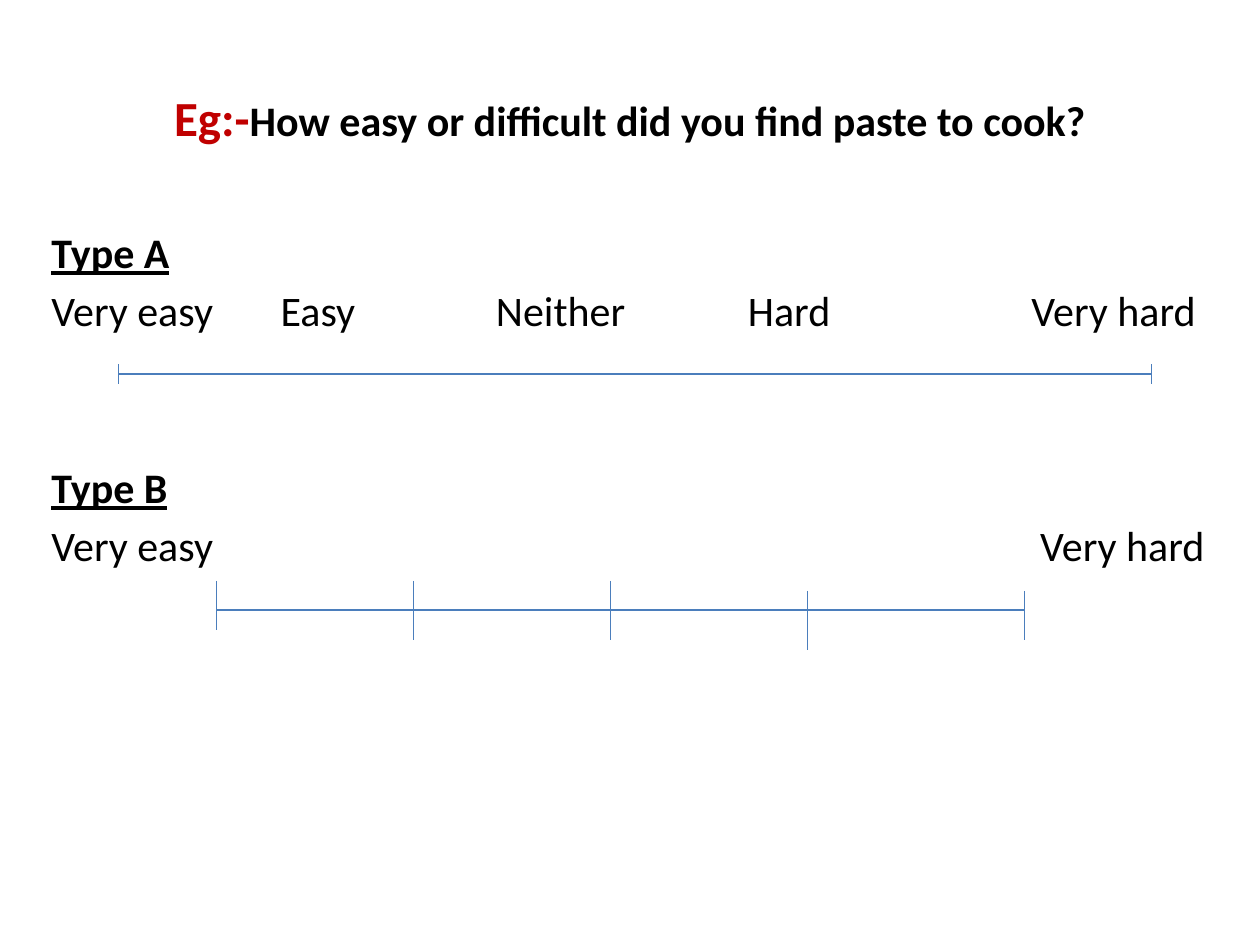
"""Build a slide that shows two kinds of rating scale under one survey question."""
from dataclasses import dataclass

from lxml import etree
from pptx import Presentation
from pptx.dml.color import RGBColor
from pptx.enum import shapes, text
from pptx.oxml import ns
from pptx.util import Pt


@dataclass(frozen=True)
class Theme:
    """Colours, font and sizes of the slide."""
    font: str = "Calibri"
    ink: RGBColor = RGBColor(0x00, 0x00, 0x00)
    accent: RGBColor = RGBColor(0xC0, 0x00, 0x00)
    line: RGBColor = RGBColor(0x4B, 0x7E, 0xBC)
    lead_size: float = 28
    body_size: float = 24
    line_width: float = 0.75


THEME = Theme()


def add_text_frame(slide, box):
    """Add a wrapping text box and return its text frame."""
    tf = slide.shapes.add_textbox(*map(Pt, box)).text_frame
    tf.word_wrap = True
    return tf


def style(font, size=THEME.body_size, color=THEME.ink, bold=False, underline=False):
    """Set the look of a paragraph or run font."""
    font.name, font.size, font.bold, font.underline = THEME.font, Pt(size), bold, underline
    font.color.rgb = color


def add_tab_stops(p, stops):
    """Give a paragraph left tab stops, measured from its text edge."""
    tabs = etree.SubElement(p._p.get_or_add_pPr(), ns.qn("a:tabLst"))
    for stop in stops:
        etree.SubElement(tabs, ns.qn("a:tab"), pos=str(Pt(stop)), algn="l")


def add_line(slide, x1, y1, x2, y2):
    """Draw a thin straight line without a shadow."""
    line = slide.shapes.add_connector(
        shapes.MSO_CONNECTOR.STRAIGHT, Pt(x1), Pt(y1), Pt(x2), Pt(y2))
    line.line.color.rgb = THEME.line
    line.line.width = Pt(THEME.line_width)
    etree.SubElement(line._element.spPr, ns.qn("a:effectLst"))


def add_question(slide, box, lead, question):
    """Write the centred question with its coloured lead-in."""
    tf = add_text_frame(slide, box)
    tf.vertical_anchor = text.MSO_ANCHOR.MIDDLE
    p = tf.paragraphs[0]
    p.alignment = text.PP_ALIGN.CENTER
    for words, size, color in ((lead, THEME.lead_size, THEME.accent),
                               (question, THEME.body_size, THEME.ink)):
        r = p.add_run()
        r.text = words
        style(r.font, size, color, bold=True)


def add_scale(slide, box, heading, labels, stops, axis_y, ticks):
    """Write a heading and tabbed labels above an axis with (x, top, bottom) ticks."""
    left, top = box[:2]
    tf = add_text_frame(slide, box)
    p = tf.paragraphs[0]
    p.text = heading
    p.space_after = Pt(4.3)
    style(p.font, bold=True, underline=True)
    p = tf.add_paragraph()
    p.text = "\t".join(labels)
    style(p.font)
    add_tab_stops(p, stops)

    add_line(slide, left + ticks[0][0], top + axis_y, left + ticks[-1][0], top + axis_y)
    for x, start, end in ticks:
        add_line(slide, left + x, top + start, left + x, top + end)


def main():
    """Assemble and save the slide."""
    prs = Presentation()
    prs.slide_width, prs.slide_height = Pt(720), Pt(540)
    slide = prs.slides.add_slide(prs.slide_layouts[6])

    add_question(slide, (36, 21.6, 648, 90), "Eg:-",
                 "How easy or difficult did you find paste to cook?")

    left, top, width, height, pitch = 22.3, 126, 680, 75, 134.3
    add_scale(slide, (left, top, width, height), "Type A",
              ("Very easy", "Easy", "Neither", "Hard", "Very hard"),
              (131, 254, 398, 560), 87.8,
              [(x, 82.1, 93.6) for x in (45.4, 635.8)])

    spans = ((71.6, 99.7), (71.6, 105.5), (71.6, 105.5), (77.4, 111.2), (77.4, 105.5))
    xs = [101.5 + 112.5 * i for i in range(4)] + [563]
    add_scale(slide, (left, top + pitch, width, height), "Type B",
              ("Very easy", "Very hard"), (565,), 88.3,
              [(x, *span) for x, span in zip(xs, spans)])

    prs.save("out.pptx")


if __name__ == "__main__":
    main()
